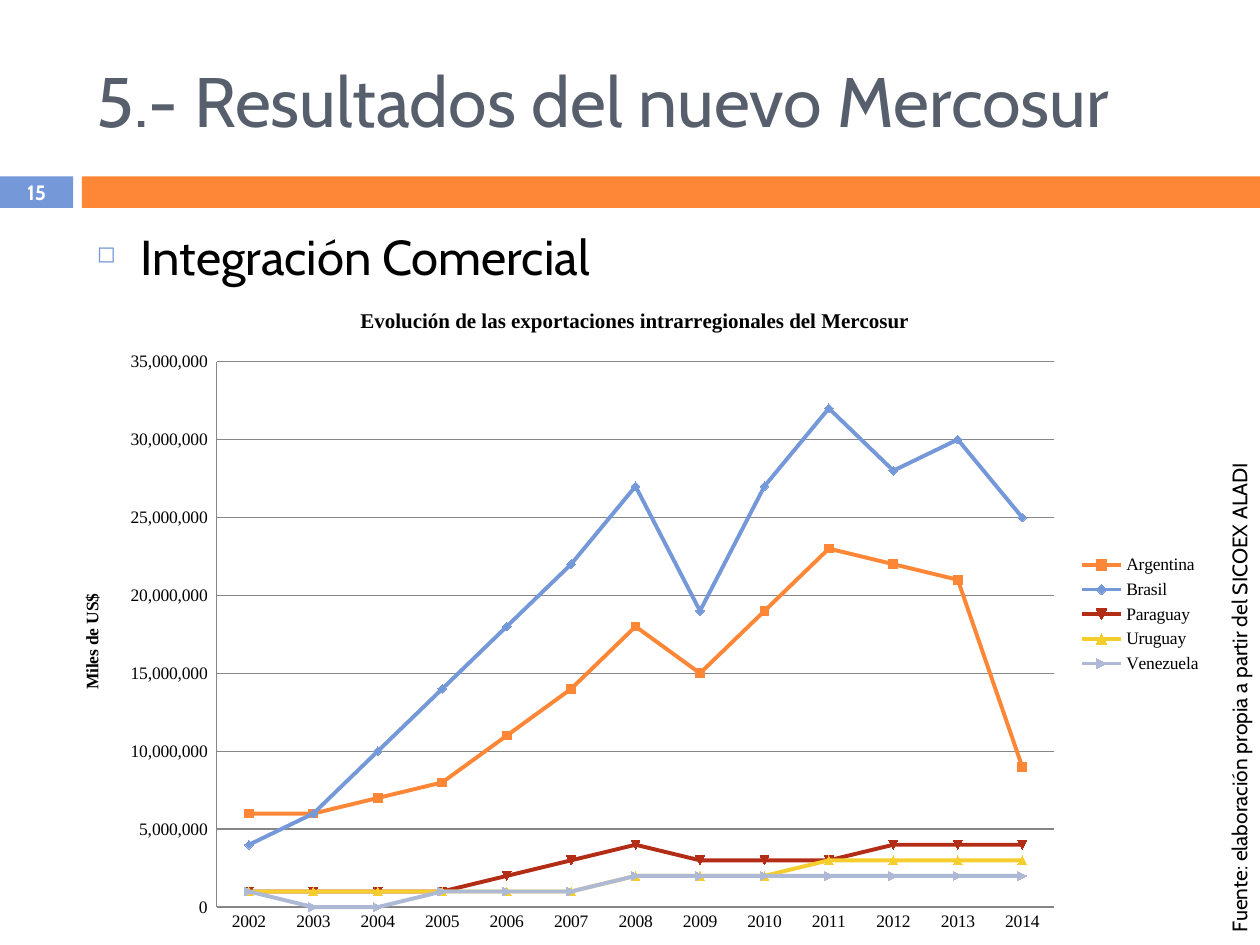
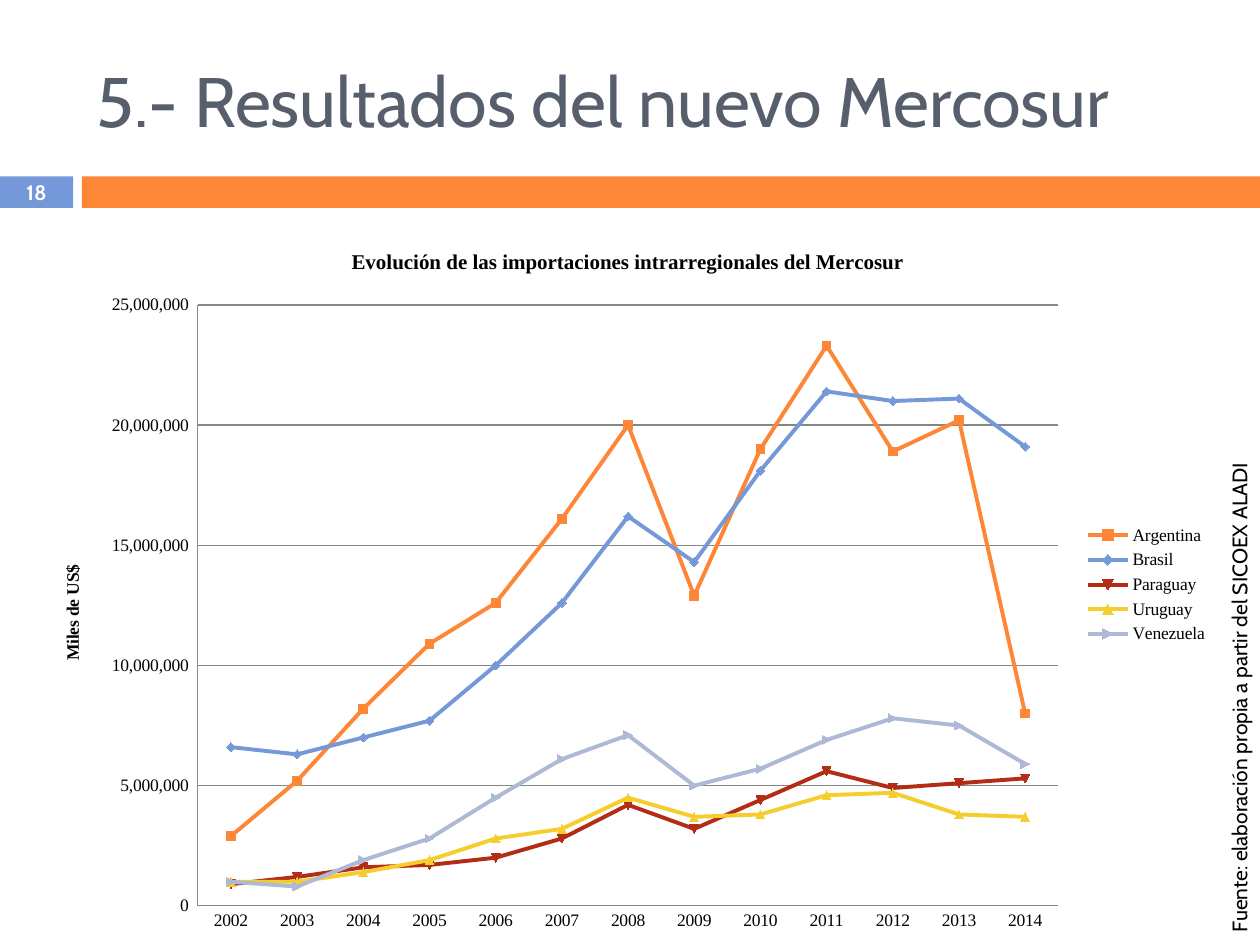
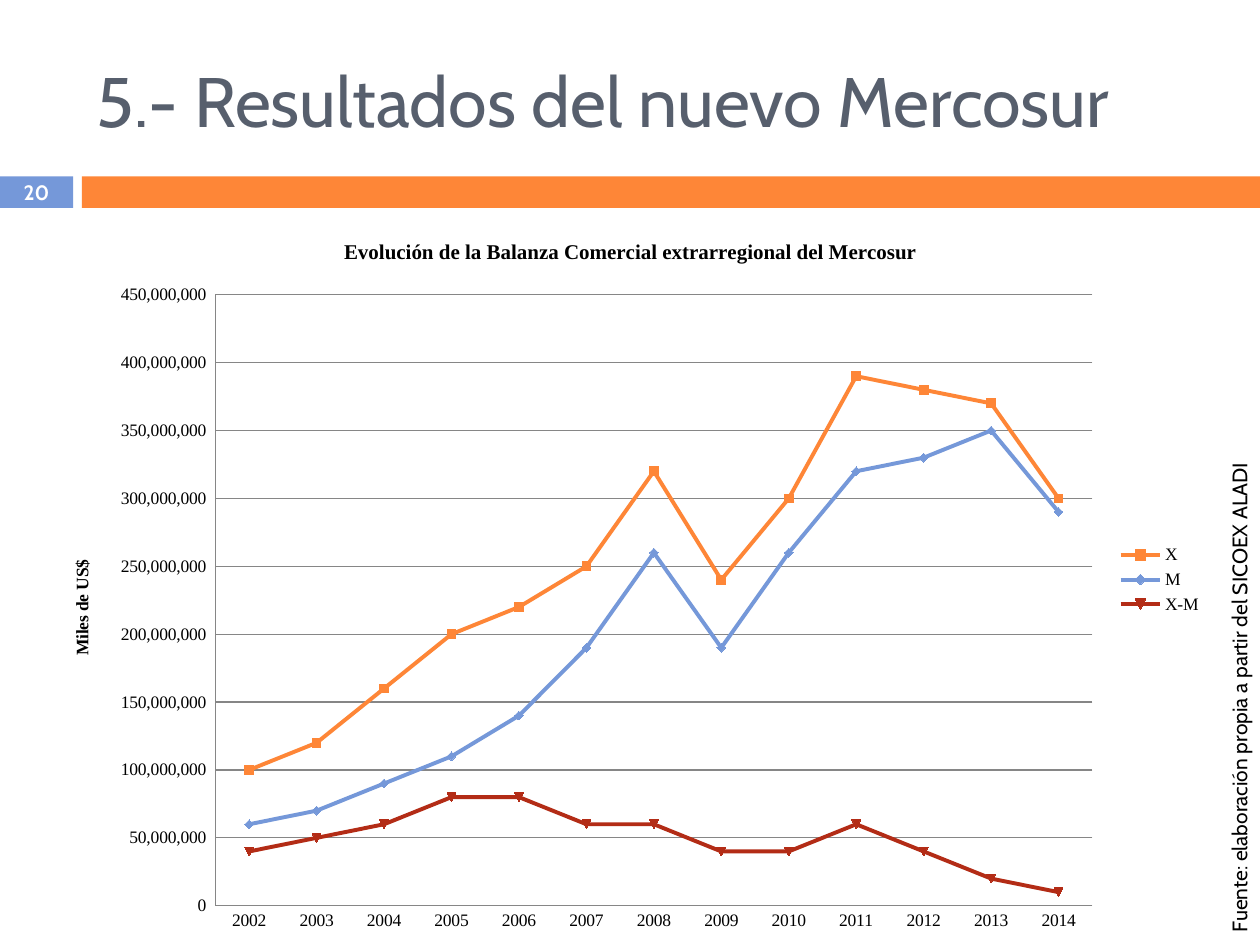
from lxml.etree import SubElement
from pptx import Presentation
from pptx.chart.data import CategoryChartData
from pptx.dml.color import RGBColor
from pptx.enum.chart import XL_CHART_TYPE, XL_LEGEND_POSITION, XL_TICK_MARK
from pptx.enum.shapes import MSO_SHAPE
from pptx.enum.text import MSO_ANCHOR, PP_ALIGN
from pptx.oxml import parse_xml
from pptx.oxml.ns import nsdecls, qn
from pptx.util import Inches, Pt

COLORS = {
    "title": "575F6D", "text": "000000", "white": "FFFFFF", "axis": "868686",
    "orange": "FE8637", "blue": "7598D9", "red": "B32C16",
    "yellow": "F5CD2D", "lavender": "AEBAD5",
}
SERIES_COLORS = ["orange", "blue", "red", "yellow", "lavender"]
FONT = "Cabin"
CHART_FONT = "Times New Roman"
YEARS = [str(year) for year in range(2002, 2015)]
MILLION = 1_000_000
TITLE = "5.- Resultados del nuevo Mercosur"
SOURCE = "Fuente: elaboración propia a partir del SICOEX ALADI"

EXPORTS = {
    "Argentina": [6, 6, 7, 8, 11, 14, 18, 15, 19, 23, 22, 21, 9],
    "Brasil": [4, 6, 10, 14, 18, 22, 27, 19, 27, 32, 28, 30, 25],
    "Paraguay": [1, 1, 1, 1, 2, 3, 4, 3, 3, 3, 4, 4, 4],
    "Uruguay": [1, 1, 1, 1, 1, 1, 2, 2, 2, 3, 3, 3, 3],
    "Venezuela": [1, 0, 0, 1, 1, 1, 2, 2, 2, 2, 2, 2, 2],
}
IMPORTS = {
    "Argentina": [2.9, 5.2, 8.2, 10.9, 12.6, 16.1, 20.0, 12.9, 19.0, 23.3, 18.9, 20.2, 8.0],
    "Brasil": [6.6, 6.3, 7.0, 7.7, 10.0, 12.6, 16.2, 14.3, 18.1, 21.4, 21.0, 21.1, 19.1],
    "Paraguay": [0.9, 1.2, 1.6, 1.7, 2.0, 2.8, 4.2, 3.2, 4.4, 5.6, 4.9, 5.1, 5.3],
    "Uruguay": [1.0, 1.0, 1.4, 1.9, 2.8, 3.2, 4.5, 3.7, 3.8, 4.6, 4.7, 3.8, 3.7],
    "Venezuela": [1.0, 0.8, 1.9, 2.8, 4.5, 6.1, 7.1, 5.0, 5.7, 6.9, 7.8, 7.5, 5.9],
}
BALANCE = {
    "X": [100, 120, 160, 200, 220, 250, 320, 240, 300, 390, 380, 370, 300],
    "M": [60, 70, 90, 110, 140, 190, 260, 190, 260, 320, 330, 350, 290],
    "X-M": [40, 50, 60, 80, 80, 60, 60, 40, 40, 60, 40, 20, 10],
}
SLIDES = [
    {"number": 15, "heading": "Integración Comercial",
     "chart_title": "Evolución de las exportaciones intrarregionales del Mercosur",
     "box": (0.43, 2.25, 9.21, 5.25), "plot": (1.29, 0.62, 6.65, 4.33),
     "title_left": 2.4, "top_value": 35, "step": 5, "values": EXPORTS},
    {"number": 18, "heading": None,
     "chart_title": "Evolución de las importaciones intrarregionales del Mercosur",
     "box": (0.28, 1.78, 9.41, 5.72), "plot": (1.29, 0.64, 6.83, 4.77),
     "title_left": 2.48, "top_value": 25, "step": 5, "values": IMPORTS},
    {"number": 20, "heading": None,
     "chart_title": "Evolución de la Balanza Comercial extrarregional del Mercosur",
     "box": (0.35, 1.7, 9.29, 5.8), "plot": (1.36, 0.64, 6.96, 4.85),
     "title_left": 2.35, "top_value": 450, "step": 50, "values": BALANCE},
]


def color(name):
    """Return the named palette colour."""
    return RGBColor.from_string(COLORS[name])


def style_font(font, size, name=FONT, tint="text", bold=False):
    """Apply one set of font properties."""
    font.name, font.size, font.bold = name, Pt(size), bold
    font.color.rgb = color(tint)


def style_line(line, tint, width):
    """Give a line its colour and width."""
    line.color.rgb = color(tint)
    line.width = Pt(width)


def add_text(page, text, box, size, tint="text", bold=False, align=PP_ALIGN.LEFT,
             anchor=MSO_ANCHOR.TOP, wrap=True, rotation=0):
    """Add a one-paragraph text box and return its paragraph."""
    shape = page.shapes.add_textbox(*map(Inches, box))
    shape.rotation = rotation
    frame = shape.text_frame
    frame.word_wrap, frame.vertical_anchor = wrap, anchor
    para = frame.paragraphs[0]
    para.alignment = align
    span = para.add_run()
    span.text = text
    style_font(span.font, size, tint=tint, bold=bold)
    return para


def add_band(page, box, tint):
    """Add a plain filled rectangle."""
    band = page.shapes.add_shape(MSO_SHAPE.RECTANGLE, *map(Inches, box))
    band.shadow.inherit = False
    band.fill.solid()
    band.fill.fore_color.rgb = color(tint)
    band.line.fill.background()


def add_frame(page, number):
    """Add the bands, title and page number shared by all slides."""
    add_band(page, (0, 1.4, 0.58, 0.25), "blue")
    add_band(page, (0.65, 1.4, 9.35, 0.25), "orange")
    add_text(page, TITLE, (0.67, 0.25, 8.92, 1.08), 40, tint="title",
             anchor=MSO_ANCHOR.MIDDLE)
    add_text(page, str(number), (0, 1.39, 0.58, 0.27), 11.9, tint="white", bold=True,
             align=PP_ALIGN.CENTER, anchor=MSO_ANCHOR.MIDDLE)


def add_heading(page, text):
    """Add the bulleted heading above the chart."""
    para = add_text(page, text, (0.67, 1.75, 8.92, 4.92), 28)
    para.space_before = Pt(7)
    props = para._p.get_or_add_pPr()
    props.set("marL", str(Inches(0.35)))
    props.set("indent", str(-Inches(0.35)))
    tint = SubElement(props, qn("a:buClr"))
    SubElement(tint, qn("a:srgbClr"), val=COLORS["blue"])
    SubElement(props, qn("a:buSzPct"), val="47000")
    SubElement(props, qn("a:buChar"), char="◻")


def set_layout(parent, target="", **fractions):
    """Fix the place of a chart part as fractions of the chart."""
    for old in parent.findall(qn("c:layout")):
        parent.remove(old)
    modes = "".join(f'<c:{axis}Mode val="edge"/>' for axis in "xy")
    places = "".join(f'<c:{key} val="{value:.4f}"/>' for key, value in fractions.items())
    layout = parse_xml(f'<c:layout {nsdecls("c")}><c:manualLayout>{target}{modes}{places}'
                       '</c:manualLayout></c:layout>')
    parent.insert(len(parent.findall(qn("c:tx"))), layout)


def set_title(title, text, size):
    """Write a bold chart or axis title."""
    title.text_frame.text = text
    style_font(title.text_frame.paragraphs[0].runs[0].font, size, CHART_FONT, bold=True)


def style_axes(chart, top_value, step):
    """Format both axes, the grid and the value title."""
    values = chart.value_axis
    for axis in (chart.category_axis, values):
        axis.major_tick_mark = axis.minor_tick_mark = XL_TICK_MARK.NONE
        style_line(axis.format.line, "axis", 0.75)
    values.minimum_scale, values.maximum_scale = 0, top_value * MILLION
    values.major_unit = step * MILLION
    style_line(values.major_gridlines.format.line, "axis", 0.75)
    values.tick_labels.number_format = "#,##0_ ;[Red]\\-#,##0\\ "
    values.tick_labels.number_format_is_linked = False
    set_title(values.axis_title, "Miles de US$", 10)
    body = values.axis_title.text_frame._txBody.bodyPr
    body.set("rot", "-5400000")
    body.set("vert", "horz")


def add_line_chart(page, box, plot, chart_title, title_left, top_value, step, values):
    """Add a line chart; plot and title_left are relative to its box."""
    data = CategoryChartData()
    data.categories = YEARS
    for name, millions in values.items():
        data.add_series(name, [round(value * MILLION) for value in millions])
    chart = page.shapes.add_chart(
        XL_CHART_TYPE.LINE_MARKERS, *map(Inches, box), data).chart
    style_font(chart.font, 10, CHART_FONT)
    set_title(chart.chart_title, chart_title, 12)
    chart.has_legend = True
    chart.legend.position = XL_LEGEND_POSITION.RIGHT
    chart.legend.include_in_layout = False
    chart.plots[0].vary_by_categories = False
    style_axes(chart, top_value, step)
    for series, tint in zip(chart.plots[0].series, SERIES_COLORS):
        series.smooth = False
        style_line(series.format.line, tint, 2.25)
        series.marker.format.fill.solid()
        series.marker.format.fill.fore_color.rgb = color(tint)
    left, top, width, height = plot
    chart_width, chart_height = box[2:]
    set_layout(chart._chartSpace.chart.plotArea, '<c:layoutTarget val="inner"/>',
               x=left / chart_width, y=top / chart_height,
               w=width / chart_width, h=height / chart_height)
    set_layout(chart.chart_title._element, x=title_left / chart_width, y=0.16 / chart_height)


def add_chart_slide(deck, number, heading, **chart):
    """Add one slide with its frame, optional heading, chart and source."""
    page = deck.slides.add_slide(deck.slide_layouts[6])
    add_frame(page, number)
    if heading:
        add_heading(page, heading)
    add_line_chart(page, **chart)
    add_text(page, SOURCE, (7.87, 5.37, 3.94, 0.31), 12, wrap=False, rotation=270)


def main():
    """Build and save the deck."""
    deck = Presentation()
    deck.slide_width, deck.slide_height = Inches(10), Inches(7.5)
    for content in SLIDES:
        add_chart_slide(deck, **content)
    deck.save("out.pptx")


if __name__ == "__main__":
    main()
